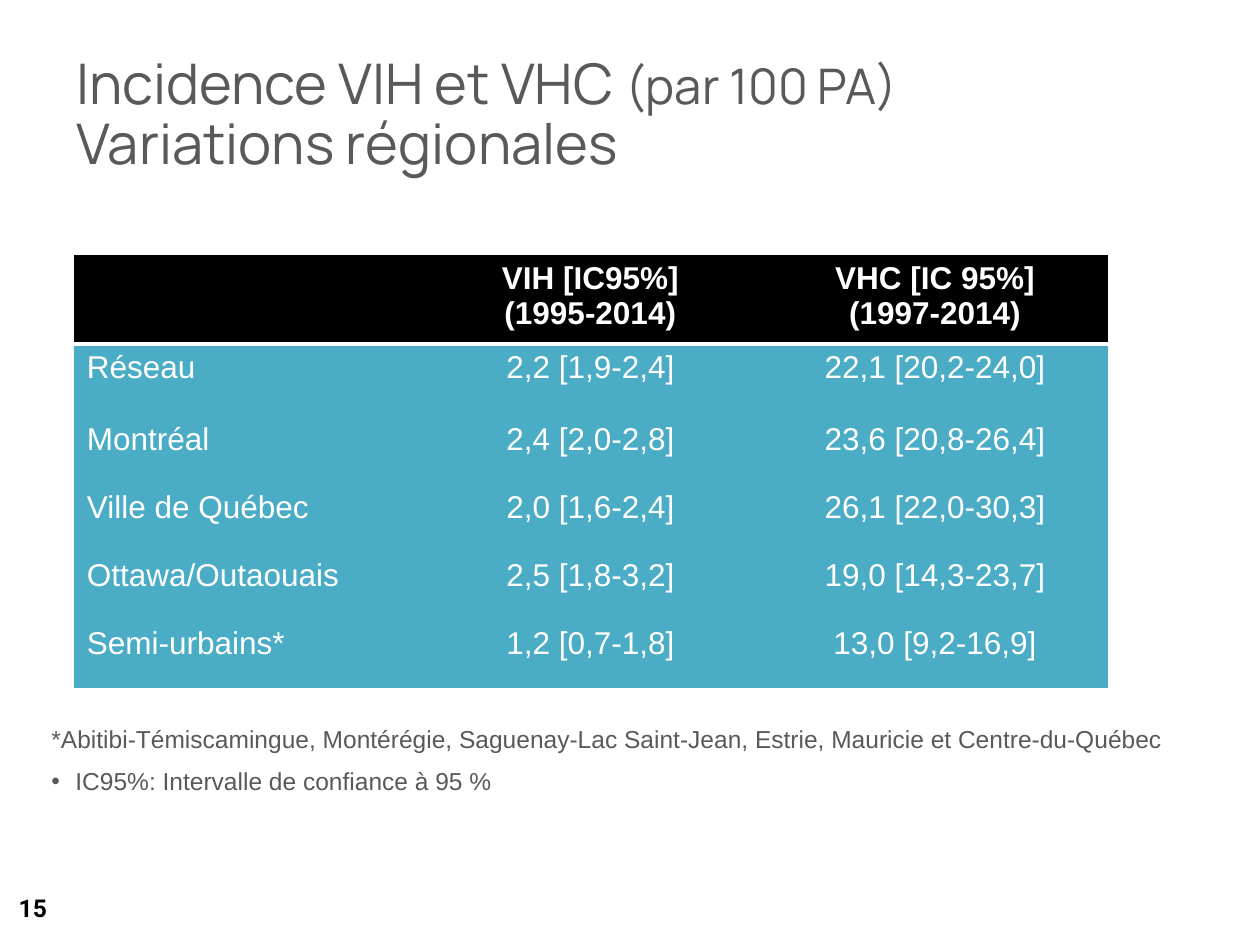
from lxml.etree import SubElement
from pptx import Presentation
from pptx.dml.color import RGBColor
from pptx.enum.text import MSO_ANCHOR, PP_ALIGN
from pptx.oxml.ns import qn
from pptx.util import Inches, Pt

BLACK = RGBColor(0, 0, 0)
WHITE = RGBColor(255, 255, 255)
GREY = RGBColor(0x59, 0x59, 0x59)
TEAL = RGBColor(0x4B, 0xAC, 0xC6)
PLAIN = "{2D5ABB26-0587-4C30-8999-92F81FD0307C}"  # no style, no grid

HEADS = ["", "VIH [IC95%]\n(1995-2014)", "VHC [IC 95%]\n(1997-2014)"]
ROWS = [
    ["Réseau", "2,2 [1,9-2,4]", "22,1 [20,2-24,0]"],
    ["Montréal", "2,4 [2,0-2,8]", "23,6 [20,8-26,4]"],
    ["Ville de Québec", "2,0 [1,6-2,4]", "26,1 [22,0-30,3]"],
    ["Ottawa/Outaouais", "2,5 [1,8-3,2]", "19,0 [14,3-23,7]"],
    ["Semi-urbains*", "1,2 [0,7-1,8]", "13,0 [9,2-16,9]"],
]
WIDTHS = [2.73, 2.73, 2.74]
HEIGHTS = [0.71, 0.57] + [0.54] * 4
NOTES = [
    ("*Abitibi-Témiscamingue, Montérégie, Saguenay-Lac Saint-Jean, "
     "Estrie, Mauricie et Centre-du-Québec", None),
    ("IC95%: Intervalle de confiance à 95 %", "•"),
]


def add_run(para, text, size, font, color, bold=False):
    run = para.add_run()
    run.text = text
    run.font.size = Pt(size)
    run.font.name = font
    run.font.color.rgb = color
    run.font.bold = bold


def add_box(slide, left, top, width, height, anchor=MSO_ANCHOR.TOP):
    box = slide.shapes.add_textbox(
        Inches(left), Inches(top), Inches(width), Inches(height))
    frame = box.text_frame
    frame.word_wrap = True
    frame.vertical_anchor = anchor
    return frame


def next_para(frame, index):
    return frame.add_paragraph() if index else frame.paragraphs[0]


def add_title(slide):
    frame = add_box(slide, 0.51, 0.3, 8.49, 1.25, MSO_ANCHOR.MIDDLE)
    para = frame.paragraphs[0]
    para.line_spacing = 0.9
    add_run(para, "Incidence VIH et VHC ", 32, "Manrope", GREY)
    add_run(para, "(par 100 PA)", 28, "Manrope", GREY)
    para.add_line_break()
    add_run(para, "Variations régionales", 32, "Manrope", GREY)


def add_rule(cell):
    """Draw the white line under a header cell."""
    line = SubElement(cell._tc.get_or_add_tcPr(), qn("a:lnB"), w=str(Pt(2)))
    fill = SubElement(line, qn("a:solidFill"))
    SubElement(fill, qn("a:srgbClr"), val=str(WHITE))


def fill_cell(cell, text, head, align):
    if head:
        add_rule(cell)
    cell.fill.solid()
    cell.fill.fore_color.rgb = BLACK if head else TEAL
    if not text:
        return
    for i, line in enumerate(text.split("\n")):
        para = next_para(cell.text_frame, i)
        para.alignment = align
        add_run(para, line, 18, "Arial", WHITE, head)


def add_grid(slide):
    frame = slide.shapes.add_table(
        len(HEIGHTS), len(WIDTHS), Inches(0.59), Inches(2.02),
        Inches(sum(WIDTHS)), Inches(sum(HEIGHTS)))
    table = frame.table
    table.horz_banding = False
    table._tbl.tblPr.find(qn("a:tableStyleId")).text = PLAIN
    for col, width in zip(table.columns, WIDTHS):
        col.width = Inches(width)
    for row, height in zip(table.rows, HEIGHTS):
        row.height = Inches(height)
    for r, texts in enumerate([HEADS] + ROWS):
        for c, text in enumerate(texts):
            align = PP_ALIGN.CENTER if c else PP_ALIGN.LEFT
            fill_cell(table.cell(r, c), text, r == 0, align)


def add_notes(slide):
    frame = add_box(slide, 0.31, 5.7, 9.18, 0.69)
    for i, (text, mark) in enumerate(NOTES):
        para = next_para(frame, i)
        props = para._p.get_or_add_pPr()
        props.set("marL", str(Inches(0.19)))
        props.set("indent", str(Inches(-0.19)))
        if mark:
            SubElement(props, qn("a:buFont"), typeface="Arial")
            SubElement(props, qn("a:buChar"), char=mark)
        if i:
            para.space_before = Pt(7)
        add_run(para, text, 14, "Arial", GREY)


def add_number(slide):
    para = add_box(slide, -0.25, 7.04, 0.72, 0.52).paragraphs[0]
    para.alignment = PP_ALIGN.RIGHT
    add_run(para, "15", 14, "Roboto", BLACK, True)


def main():
    deck = Presentation()
    deck.slide_width = Inches(10)
    deck.slide_height = Inches(7.5)
    slide = deck.slides.add_slide(deck.slide_layouts[6])

    # Page number and title
    add_number(slide)
    add_title(slide)
    # Footnotes and regional table
    add_notes(slide)
    add_grid(slide)

    deck.save("out.pptx")


if __name__ == "__main__":
    main()
